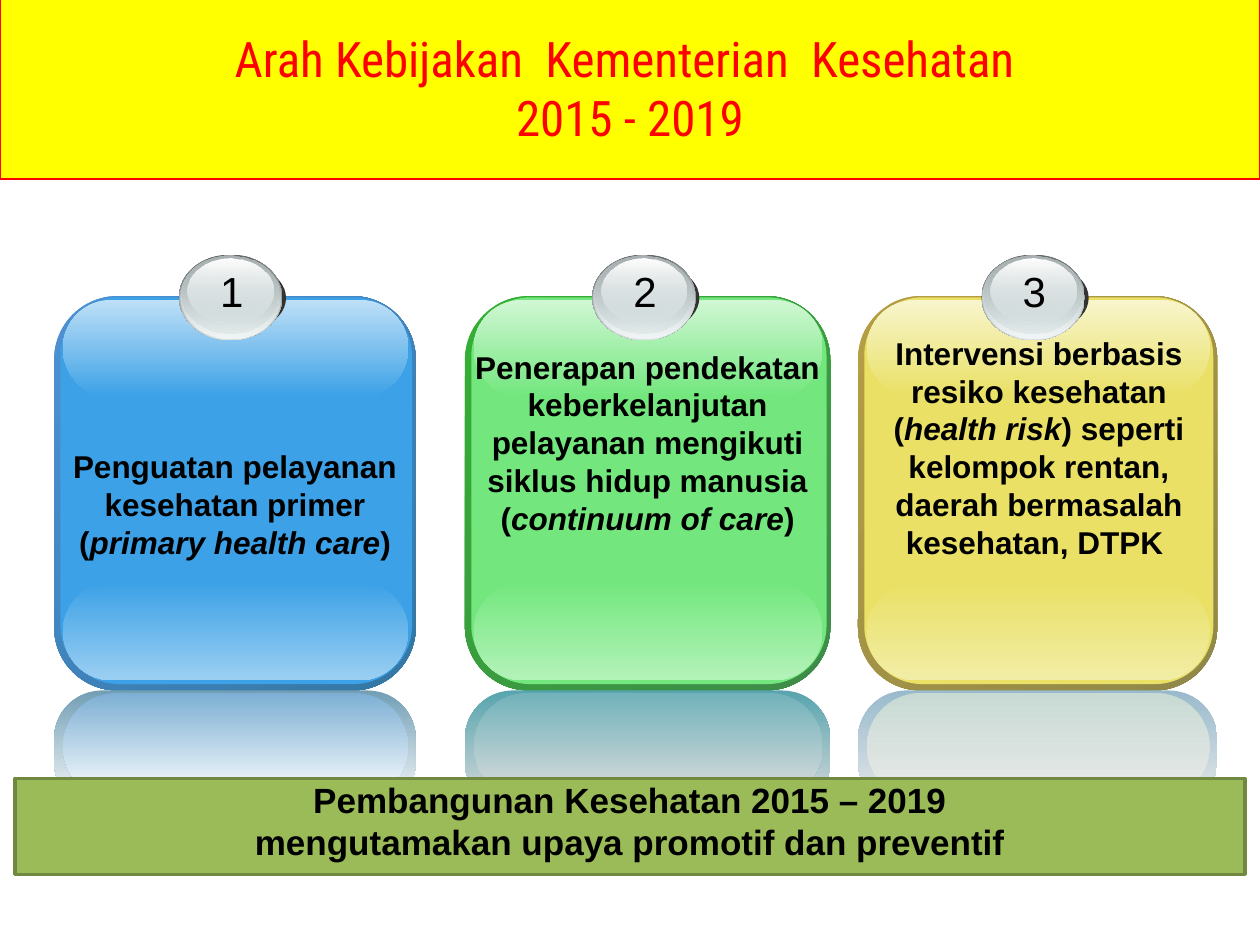
from lxml.etree import SubElement
from pptx import Presentation
from pptx.dml.color import RGBColor
from pptx.enum.shapes import MSO_SHAPE as Shape
from pptx.enum.text import MSO_ANCHOR as Anchor, MSO_AUTO_SIZE as AutoSize, PP_ALIGN as Align
from pptx.oxml.ns import qn
from pptx.util import Inches, Pt

TITLE = ["Arah Kebijakan  Kementerian  Kesehatan ", "2015 - 2019"]
CONCLUSION = ["Pembangunan Kesehatan 2015 – 2019", "mengutamakan upaya promotif dan preventif"]
CARDS = [
    {
        "left": 0.43, "width": 2.87, "badge": 1.42, "text_box": (0.5, 3.55, 2.73, 0.97),
        "text": ["Penguatan pelayanan kesehatan primer (", "primary health care", ")"],
        "rim": ("4E91D4", "3477A4"), "body": "3CA1E6", "top": "BEE0F7", "bottom": "9BCFF2",
        "reflection": [("729EB4", "FFFFFF"), ("7DAFD4", "FFFFFF")],
    },
    {
        "left": 3.69, "width": 2.9, "badge": 4.7, "text_box": (3.76, 2.76, 2.76, 1.84),
        "text": ["Penerapan pendekatan keberkelanjutan pelayanan mengikuti siklus hidup manusia (",
                 "continuum of care", ")"],
        "rim": ("34B034", "3F8B4A"), "body": "73E77E", "top": "D0F7D4", "bottom": "B3F2B9",
        "reflection": [("58A4AE", "DDDDDD"), ("72B2BB", "DDDDDD")],
    },
    {
        "left": 6.81, "width": 2.85, "badge": 7.79, "text_box": (6.95, 2.65, 2.59, 1.84),
        "text": ["Intervensi berbasis resiko kesehatan (", "health risk",
                 ") seperti kelompok rentan, daerah bermasalah kesehatan, DTPK "],
        "rim": ("B59F43", "8F8849"), "body": "E9E065", "top": "F8F5CC", "bottom": "F2EDA6",
        "reflection": [("99BACC", "EAEAEA"), ("C8DAD4", "EAEAEA")],
    },
]
BADGE_LAYERS = [
    (0, 2.08, 0.85, 0.57, ["333333"], [100]),
    (0, 2.02, 0.82, 0.68, ["636869", "D6E1E2"], [100, 100]),
    (0.01, 2.02, 0.8, 0.67, ["D6E1E2", "F1F5F5"], [0, 100]),
    (0.02, 2.03, 0.77, 0.62, ["AAB2B3", "D6E1E2"], [100, 48]),
    (0.07, 2.05, 0.68, 0.51, ["FFFFFF", "D6E1E2"], [100, 38]),
]


def color(value):
    return RGBColor.from_string(value)


def place(shape, box):
    shape.left, shape.top, shape.width, shape.height = map(Inches, box)


def add_block(slide, kind, box, colors, angle=90, opacities=(100, 100), corner=None):
    shape = slide.shapes.add_shape(kind, *map(Inches, box))
    shape.shadow.inherit = False
    shape.line.fill.background()
    if corner is not None:
        shape.adjustments[0] = corner
    if len(colors) == 1:
        shape.fill.solid()
        shape.fill.fore_color.rgb = color(colors[0])
        return shape
    shape.fill.gradient()
    shape.fill.gradient_angle = 360 - angle
    for stop, value in zip(shape.fill.gradient_stops, colors):
        stop.color.rgb = color(value)
    for node, opacity in zip(shape.element.spPr.iter(qn("a:srgbClr")), opacities):
        if opacity < 100:
            SubElement(node, qn("a:alpha")).set("val", str(opacity * 1000))
    return shape


def prepare_frame(shape, wrap=True, anchor=Anchor.TOP):
    frame = shape.text_frame
    frame.margin_left = frame.margin_top = frame.margin_right = frame.margin_bottom = 0
    frame.word_wrap = wrap
    frame.vertical_anchor = anchor
    frame.paragraphs[0].alignment = Align.CENTER
    return frame


def add_run(paragraph, text, size, value="000000", name="Arial", bold=False, italic=False):
    run = paragraph.add_run()
    run.text = text
    run.font.size, run.font.name = Pt(size), name
    run.font.bold, run.font.italic = bold, italic
    run.font.color.rgb = color(value)


def add_title(slide):
    title = slide.shapes.title
    place(title, (0, -0.03, 10, 1.45))
    title.fill.solid()
    title.fill.fore_color.rgb = color("FFFF00")
    title.line.color.rgb = color("FF0000")
    title.line.width = Pt(0.75)
    frame = prepare_frame(title, anchor=Anchor.MIDDLE)
    frame.auto_size = AutoSize.NONE
    paragraph = frame.paragraphs[0]
    for index, line in enumerate(TITLE):
        if index:
            paragraph.add_line_break()
        add_run(paragraph, line, 28, "FF0000", "Roboto Condensed")


def add_card(slide, number, card):
    left, width, body = card["left"], card["width"], card["body"]
    gloss_left, gloss_width = left + 0.07, width - 0.13
    outer, inner = card["reflection"]
    panels = [
        ((left, 2.35, width, 3.13), card["rim"], 45, 0.175),
        ((left + 0.05, 2.36, width - 0.08, 3.07), [body], 90, 0.167),
        ((gloss_left, 4.62, gloss_width, 0.78), (body, card["bottom"]), 90, 0.5),
        ((gloss_left, 2.38, gloss_width, 0.77), (card["top"], body), 90, 0.5),
        ((left, 5.48, width, 0.95), outer, 90, 0.404),
        ((gloss_left, 5.5, gloss_width, 0.85), inner, 90, 0.5),
    ]
    for box, colors, angle, corner in panels:
        add_block(slide, Shape.ROUNDED_RECTANGLE, box, colors, angle, corner=corner)
    for inset, top, layer_width, height, colors, opacities in BADGE_LAYERS:
        box = (card["badge"] + inset, top, layer_width, height)
        add_block(slide, Shape.OVAL, box, colors, opacities=opacities)

    number_box = slide.shapes.add_textbox(*map(Inches, (card["badge"] + 0.27, 2.11, 0.3, 0.48)))
    frame = prepare_frame(number_box, wrap=False)
    frame.auto_size = AutoSize.SHAPE_TO_FIT_TEXT
    add_run(frame.paragraphs[0], str(number), 24)

    text_box = slide.shapes.add_textbox(*map(Inches, card["text_box"]))
    frame = prepare_frame(text_box)
    for index, text in enumerate(card["text"]):
        add_run(frame.paragraphs[0], text, 18, bold=True, italic=index == 1)


def add_conclusion(slide):
    banner = add_block(slide, Shape.RECTANGLE, (0.12, 6.18, 9.76, 0.76), ["9BBB59"])
    banner.line.color.rgb = color("718841")
    banner.line.width = Pt(2)
    frame = prepare_frame(banner)
    for index, line in enumerate(CONCLUSION):
        paragraph = frame.add_paragraph() if index else frame.paragraphs[0]
        paragraph.alignment = Align.CENTER
        add_run(paragraph, line, 20, bold=True)


def main():
    presentation = Presentation()
    presentation.slide_width, presentation.slide_height = Inches(10), Inches(7.5)
    slide = presentation.slides.add_slide(presentation.slide_layouts[5])
    add_title(slide)
    for number, card in enumerate(CARDS, 1):
        add_card(slide, number, card)
    add_conclusion(slide)
    presentation.save("out.pptx")


if __name__ == "__main__":
    main()
